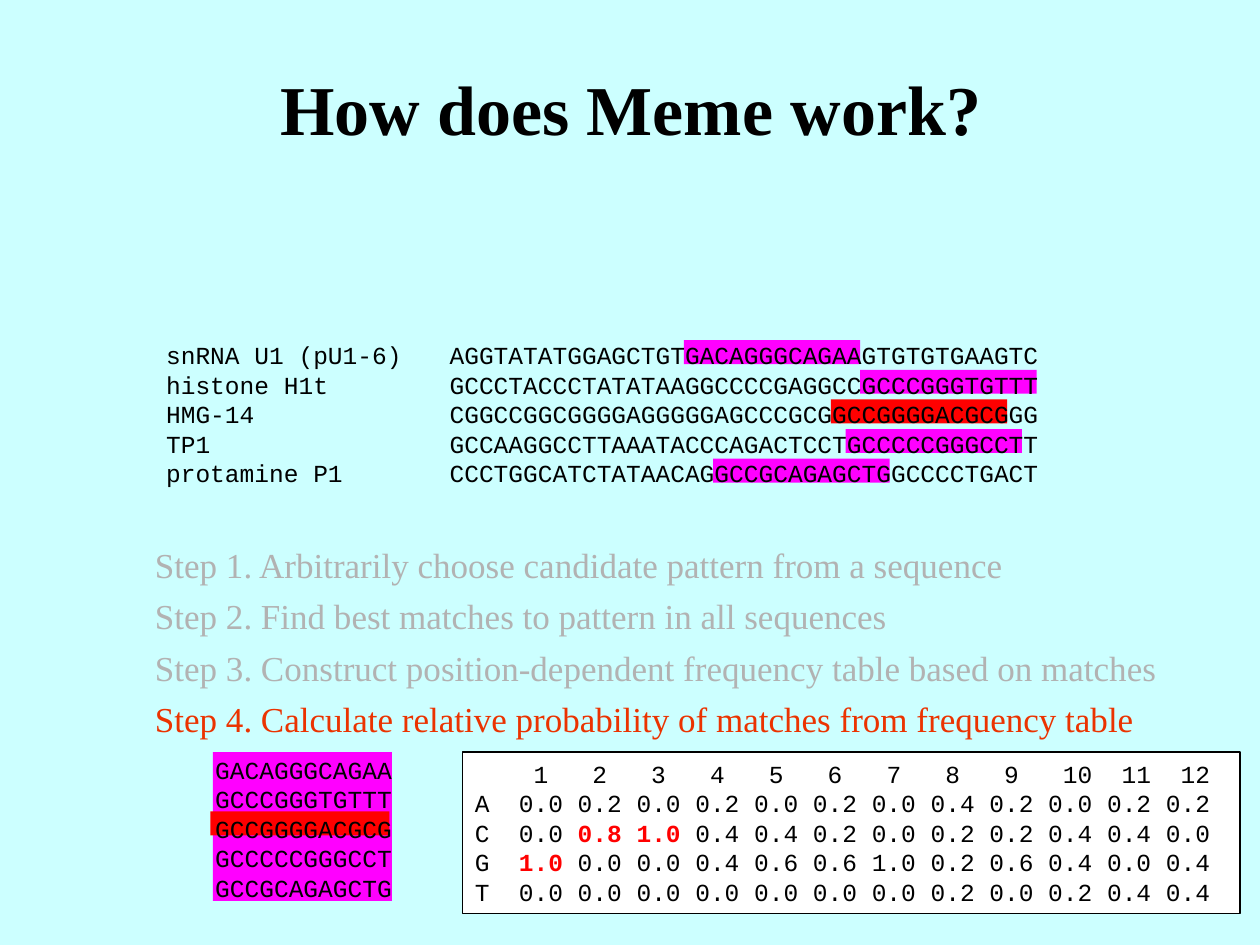
from dataclasses import dataclass

import pptx
import pptx.dml.color
import pptx.enum.shapes
import pptx.enum.text
import pptx.oxml
import pptx.oxml.ns
import pptx.util

Pt = pptx.util.Pt
TEXT = pptx.enum.text
WIDE, HIGH = pptx.util.Inches(10), pptx.util.Inches(7.5)
COLS, ROWS = 100, 75        # the slide's grid
CHAR, LINE = 1.167, 2.35    # one letter and one line of code, in grid cells


@dataclass(frozen=True)
class Theme:
    back: str = "CCFFFF"
    ink: str = "000000"
    paper: str = "FFFFFF"
    match: str = "FF00FF"
    seed: str = "FF0000"
    past: str = "B2B2B2"
    now: str = "EB3300"
    serif: str = "Times New Roman"
    mono: str = "Courier New"
    title: float = 40
    step: float = 20
    code: float = 14
    lead: float = 16.9


@dataclass(frozen=True)
class Box:
    left: float
    top: float
    cols: float
    rows: float

    def place(self) -> tuple[int, int, int, int]:
        wide, high = WIDE / COLS, HIGH / ROWS
        return (round(self.left * wide), round(self.top * high),
                round(self.cols * wide), round(self.rows * high))


@dataclass(frozen=True)
class Gene:
    name: str
    bases: str
    motif: str
    fill: str


@dataclass(frozen=True)
class Piece:
    text: str
    tint: str
    bold: bool = False


LOOK = Theme()
GENES = [
    Gene("snRNA U1 (pU1-6)", "AGGTATATGGAGCTGTGACAGGGCAGAAGTGTGTGAAGTC", "GACAGGGCAGAA", LOOK.match),
    Gene("histone H1t", "GCCCTACCCTATATAAGGCCCCGAGGCCGCCCGGGTGTTT", "GCCCGGGTGTTT", LOOK.match),
    Gene("HMG-14", "CGGCCGGCGGGGAGGGGGAGCCCGCGGCCGGGGACGCGGG", "GCCGGGGACGCG", LOOK.seed),
    Gene("TP1", "GCCAAGGCCTTAAATACCCAGACTCCTGCCCCCGGGCCTT", "GCCCCCGGGCCT", LOOK.match),
    Gene("protamine P1", "CCCTGGCATCTATAACAGGCCGCAGAGCTGGCCCCTGACT", "GCCGCAGAGCTG", LOOK.match),
]
STEPS = [
    "Step 1. Arbitrarily choose candidate pattern from a sequence",
    "Step 2. Find best matches to pattern in all sequences",
    "Step 3. Construct position-dependent frequency table based on matches",
    "Step 4. Calculate relative probability of matches from frequency table",
]
ODDS = {
    "A": [0.0, 0.2, 0.0, 0.2, 0.0, 0.2, 0.0, 0.4, 0.2, 0.0, 0.2, 0.2],
    "C": [0.0, 0.8, 1.0, 0.4, 0.4, 0.2, 0.0, 0.2, 0.2, 0.4, 0.4, 0.0],
    "G": [1.0, 0.0, 0.0, 0.4, 0.6, 0.6, 1.0, 0.2, 0.6, 0.4, 0.0, 0.4],
    "T": [0.0, 0.0, 0.0, 0.0, 0.0, 0.0, 0.0, 0.2, 0.0, 0.2, 0.4, 0.4],
}
STRONG = {("C", 1), ("C", 2), ("G", 0)}


def tint(text: str):
    return pptx.dml.color.RGBColor.from_string(text)


def style(item, **look) -> None:
    for key, value in look.items():
        setattr(item, key, value)


def write(line, piece: Piece, face: str, size: float) -> None:
    run = line.add_run()
    run.text = piece.text
    style(run.font, name=face, size=Pt(size), bold=piece.bold)
    run.font.color.rgb = tint(piece.tint)


def next_line(frame, first: bool):
    return frame.paragraphs[0] if first else frame.add_paragraph()


def set_tabs(line, stops: list[float]) -> None:
    """Add left tab stops, given in grid columns from the text's edge."""
    tabs = pptx.oxml.parse_xml(f"<a:tabLst {pptx.oxml.ns.nsdecls('a')}/>")
    for stop in stops:
        tab = tabs.makeelement(pptx.oxml.ns.qn("a:tab"), {
            "pos": str(round(stop * WIDE / COLS)), "algn": "l"})
        tabs.append(tab)
    line._p.get_or_add_pPr().append(tabs)


def draw_rect(slide, box: Box, fill: str, edge: str = ""):
    rect = slide.shapes.add_shape(
        pptx.enum.shapes.MSO_SHAPE.RECTANGLE, *box.place())
    rect.shadow.inherit = False
    rect.fill.solid()
    rect.fill.fore_color.rgb = tint(fill)
    if edge:
        rect.line.color.rgb = tint(edge)
        rect.line.width = Pt(1)
    else:
        rect.line.fill.background()
    return rect


def fill_code(shape, lines: list[list[Piece]], tabs: list[list[float]]) -> None:
    frame = shape.text_frame
    style(frame, word_wrap=True, vertical_anchor=TEXT.MSO_ANCHOR.TOP)
    for spot, (parts, stops) in enumerate(zip(lines, tabs)):
        line = next_line(frame, spot == 0)
        style(line, alignment=TEXT.PP_ALIGN.LEFT, line_spacing=Pt(LOOK.lead))
        if stops:
            set_tabs(line, stops)
        for part in parts:
            write(line, part, LOOK.mono, LOOK.code)


def move(shape, box: Box) -> None:
    style(shape, **dict(zip(("left", "top", "width", "height"), box.place())))


def draw_heads(slide) -> None:
    """Fill the title and the list of steps."""
    title, body = slide.placeholders
    move(title, Box(9.2, 4.5, 81.7, 8.1))
    style(title.text_frame, auto_size=TEXT.MSO_AUTO_SIZE.NONE,
          vertical_anchor=TEXT.MSO_ANCHOR.MIDDLE)
    line = title.text_frame.paragraphs[0]
    line.alignment = TEXT.PP_ALIGN.CENTER
    write(line, Piece("How does Meme work?", LOOK.ink, True), LOOK.serif, LOOK.title)

    move(body, Box(11.3, 42.6, 84.3, 16))
    style(body.text_frame, auto_size=TEXT.MSO_AUTO_SIZE.NONE, word_wrap=True)
    for spot, step in enumerate(STEPS):
        line = next_line(body.text_frame, spot == 0)
        style(line, space_before=Pt(0), space_after=Pt(5.4))
        props = line._p.get_or_add_pPr()
        props.set("marL", "0")
        props.set("indent", "0")
        props.append(props.makeelement(pptx.oxml.ns.qn("a:buNone"), {}))
        hue = LOOK.now if step == STEPS[-1] else LOOK.past
        write(line, Piece(step, hue), LOOK.serif, LOOK.step)


def draw_genes(slide) -> None:
    """Draw the sequences over a mark behind each motif."""
    for row, gene in enumerate(GENES):
        start = 35.6 + gene.bases.find(gene.motif) * CHAR
        draw_rect(slide, Box(start, 27 + row * LINE, 14, 1.9), gene.fill)
    text = slide.shapes.add_textbox(*Box(12.2, 26.5, 71.8, 12.6).place())
    fill_code(text, [[Piece(f"{gene.name}\t{gene.bases}", LOOK.ink)]
                     for gene in GENES], [[22.5]] * len(GENES))


def draw_motifs(slide) -> None:
    draw_rect(slide, Box(16.9, 59.7, 14.2, 11.8), LOOK.match)
    draw_rect(slide, Box(16.7, 64.4, 14.2, 1.9), LOOK.seed)
    text = slide.shapes.add_textbox(*Box(16.1, 59.4, 18, 12.6).place())
    fill_code(text, [[Piece(gene.motif, LOOK.ink)] for gene in GENES],
              [[]] * len(GENES))


def draw_odds(slide) -> None:
    """Draw the frequency table, one tab stop for each position."""
    count = len(ODDS["A"])
    lines = [[Piece(f"\t{spot + 1}", LOOK.ink) for spot in range(count)]]
    for base, odds in ODDS.items():
        line = [Piece(base, LOOK.ink)]
        for spot, value in enumerate(odds):
            bold = (base, spot) in STRONG
            line.append(Piece(f"\t{value:.1f}", LOOK.seed if bold else LOOK.ink, bold))
        lines.append(line)
    tabs = [[(4 * spot + (4 if row == 0 else 3)) * CHAR for spot in range(count)]
            for row in range(len(lines))]
    frame = draw_rect(slide, Box(36.7, 59.7, 61.7, 12.8), LOOK.paper, LOOK.ink)
    fill_code(frame, lines, tabs)


def main() -> None:
    deck = pptx.Presentation()
    style(deck, slide_width=WIDE, slide_height=HIGH)
    slide = deck.slides.add_slide(deck.slide_layouts[1])
    slide.background.fill.solid()
    slide.background.fill.fore_color.rgb = tint(LOOK.back)
    for draw in (draw_heads, draw_genes, draw_motifs, draw_odds):
        draw(slide)
    deck.save("out.pptx")


if __name__ == "__main__":
    main()
